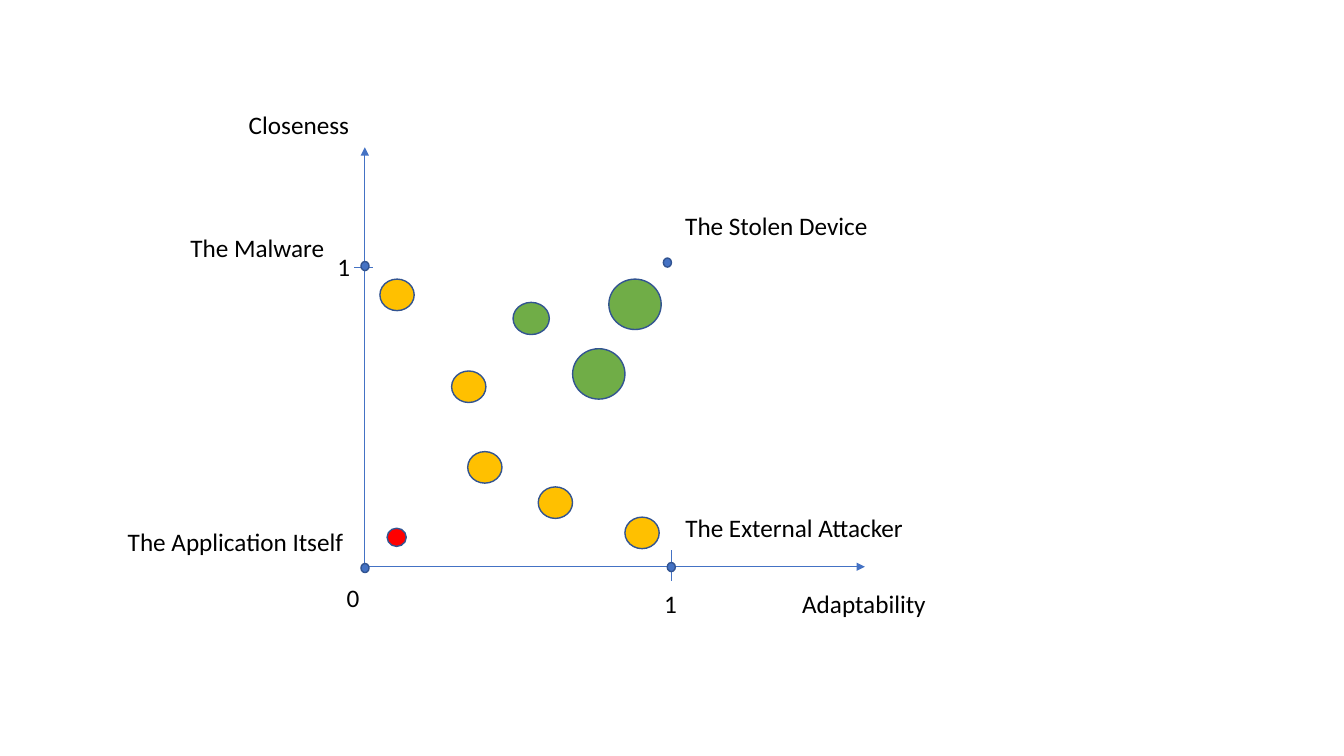
from dataclasses import dataclass

from lxml.etree import SubElement
from pptx import Presentation
from pptx.dml.color import RGBColor
from pptx.enum.shapes import MSO_CONNECTOR, MSO_SHAPE
from pptx.enum.text import MSO_AUTO_SIZE
from pptx.oxml.ns import qn
from pptx.util import Pt


@dataclass(frozen=True)
class Theme:
    font: str = "Calibri"
    size: float = 18
    text: str = "000000"
    axis: str = "4472C4"
    edge: str = "325491"
    green: str = "70AD47"
    amber: str = "FFC000"
    red: str = "FF0000"
    thin: float = 0.5
    rim: float = 1


class Chart:
    def __init__(self, slide, theme):
        self.shapes = slide.shapes
        self.theme = theme

    def line(self, start, end, arrow=False):
        link = self.shapes.add_connector(
            MSO_CONNECTOR.STRAIGHT, *map(Pt, start + end))
        link.line.color.rgb = RGBColor.from_string(self.theme.axis)
        link.line.width = Pt(self.theme.thin)
        if arrow:
            SubElement(link.line._get_or_add_ln(), qn("a:tailEnd"), type="triangle")
        SubElement(link._element.spPr, qn("a:effectLst"))

    def circle(self, left, top, size, color):
        disc = self.shapes.add_shape(
            MSO_SHAPE.FLOWCHART_CONNECTOR, *map(Pt, (left, top) + size))
        disc.shadow.inherit = False
        disc.fill.solid()
        disc.fill.fore_color.rgb = RGBColor.from_string(color)
        disc.line.color.rgb = RGBColor.from_string(self.theme.edge)
        disc.line.width = Pt(self.theme.rim)

    def label(self, text, left, top, width):
        box = self.shapes.add_textbox(*map(Pt, (left, top, width, 29)))
        frame = box.text_frame
        frame.word_wrap = False
        frame.auto_size = MSO_AUTO_SIZE.SHAPE_TO_FIT_TEXT
        line = frame.paragraphs[0]
        line.text = text
        line.font.name = self.theme.font
        line.font.size = Pt(self.theme.size)
        line.font.color.rgb = RGBColor.from_string(self.theme.text)


def main():
    deck = Presentation()
    deck.slide_width, deck.slide_height = Pt(960), Pt(540)
    theme = Theme()
    chart = Chart(deck.slides.add_slide(deck.slide_layouts[6]), theme)

    zero = (260.6, 404.8)
    chart.line(zero, (zero[0], 105.2), arrow=True)
    chart.line(zero, (617.8, zero[1]), arrow=True)
    chart.line((266.4, 190.8), (252.7, 190.8))
    chart.line((479.5, 414.7), (479.5, 393.1))

    for left, top in ((473.8, 184.3), (257.8, 186.8), (476.6, 401.8), (257.8, 402.5)):
        chart.circle(left, top, (5.8, 6.5), theme.axis)

    labels = (
        ("Adaptability", 565.9, 416.9, 103.7),
        ("Closeness", 170.6, 74.2, 87.1),
        ("0", 240.5, 412.6, 23.8),
        ("1", 234, 175.7, 23.8),
        ("1", 467.3, 416.9, 23.8),
        ("The Stolen Device", 482.4, 146.9, 146.2),
        ("The Application Itself", 84.2, 372.2, 170.6),
        ("The Malware", 128.9, 162.7, 111.6),
        ("The External Attacker", 482.4, 362.2, 172.1),
    )
    for label in labels:
        chart.label(*label)

    groups = (
        (theme.green, (37.4, 36), ((409, 249.1), (434.9, 199.4))),
        (theme.green, (25.9, 23), ((366.5, 216),)),
        (theme.amber, (24.5, 22.5), (
            (322.6, 265), (384.5, 347.8), (334.1, 322.6),
            (271.4, 199.4), (446.4, 369.4))),
        (theme.red, (13.7, 13), ((276.5, 377.3),)),
    )
    for color, size, spots in groups:
        for left, top in spots:
            chart.circle(left, top, size, color)

    deck.save("out.pptx")


if __name__ == "__main__":
    main()
